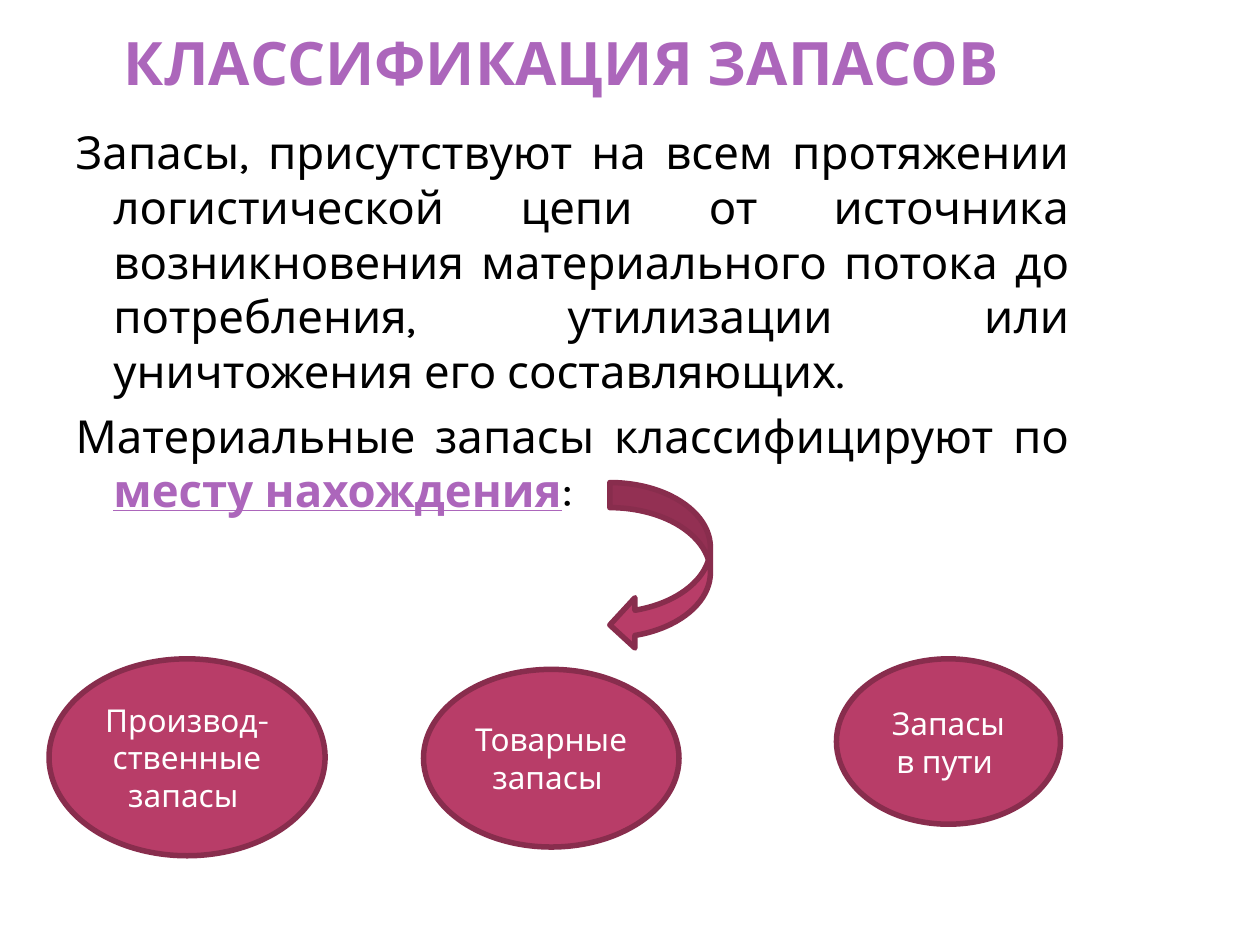
from lxml import etree
from pptx import Presentation
from pptx import util as u
from pptx.dml.color import RGBColor
from pptx.enum import shapes, text
from pptx.oxml.ns import qn

COLORS = {
    "accent": "AC66BB",
    "ink": "000000",
    "berry": "B83D68",
    "border": "882D4D",
    "light": "FFFFFF",
}


class InventorySlide:
    font = "Karla"
    line_width = 3.15

    def __init__(self, deck):
        self.slide = deck.slides.add_slide(deck.slide_layouts[1])

    def color(self, name):
        return RGBColor.from_string(COLORS[name])

    def place(self, part, box):
        part.left, part.top, part.width, part.height = map(u.Pt, box)

    def add_run(self, paragraph, words, size, color, bold=False, underline=False):
        run = paragraph.add_run()
        run.text = words
        run.font.name = self.font
        run.font.size = u.Pt(size)
        run.font.bold = bold
        run.font.underline = underline
        run.font.color.rgb = self.color(color)

    def title(self, words, box):
        heading = self.slide.shapes.title
        self.place(heading, box)
        frame = heading.text_frame
        frame.auto_size = text.MSO_AUTO_SIZE.NONE
        frame.vertical_anchor = text.MSO_ANCHOR.BOTTOM
        frame.margin_left = frame.margin_right = u.Pt(3.6)
        frame.margin_top = frame.margin_bottom = 0
        frame.paragraphs[0].alignment = text.PP_ALIGN.CENTER
        self.add_run(frame.paragraphs[0], words, 34.2, "accent", bold=True)

    def body(self, paragraphs, box):
        description = self.slide.placeholders[1]
        self.place(description, box)
        frame = description.text_frame
        frame.auto_size = text.MSO_AUTO_SIZE.NONE
        for index, runs in enumerate(paragraphs):
            paragraph = frame.add_paragraph() if index else frame.paragraphs[0]
            properties = paragraph._p.get_or_add_pPr()
            properties.set("marL", str(u.Pt(21.6)))
            properties.set("indent", str(u.Pt(-21.6)))
            etree.SubElement(properties, qn("a:buNone"))
            paragraph.alignment = text.PP_ALIGN.JUSTIFY
            paragraph.space_before = u.Pt(6 if index else 0)
            for words, color, emphasized in runs:
                self.add_run(paragraph, words, 26, color, emphasized, emphasized)

    def shape(self, kind, box):
        figure = self.slide.shapes.add_shape(kind, *map(u.Pt, box))
        figure.shadow.inherit = False
        figure.fill.solid()
        figure.fill.fore_color.rgb = self.color("berry")
        figure.line.color.rgb = self.color("border")
        figure.line.width = u.Pt(self.line_width)
        return figure

    def arrow(self, box):
        self.shape(shapes.MSO_SHAPE.CURVED_LEFT_ARROW, box)

    def category(self, words, box):
        frame = self.shape(shapes.MSO_SHAPE.OVAL, box).text_frame
        frame.word_wrap = True
        frame.vertical_anchor = text.MSO_ANCHOR.MIDDLE
        frame.paragraphs[0].alignment = text.PP_ALIGN.CENTER
        self.add_run(frame.paragraphs[0], words, 18, "light")


def main():
    deck = Presentation()
    deck.slide_width, deck.slide_height = u.Pt(720), u.Pt(540)
    inventory = InventorySlide(deck)
    inventory.title("КЛАССИФИКАЦИЯ ЗАПАСОВ", (36, 16.5, 570, 39.5))
    inventory.body(
        [
            [(
                "Запасы, присутствуют на всем протяжении логистической цепи "
                "от источника возникновения материального потока до потребления, "
                "утилизации или уничтожения его составляющих. ",
                "ink", False,
            )],
            [
                ("Материальные запасы классифицируют по ", "ink", False),
                ("месту нахождения", "accent", True),
                (":", "ink", False),
            ],
        ],
        (36, 67.5, 582.5, 440.5),
    )
    inventory.arrow((348.5, 275.75, 57.5, 95.75))
    categories = [
        ("Производ-ственные запасы ", (28, 376.5, 157.75, 112.5)),
        ("Товарные запасы ", (242, 382.5, 146, 101.5)),
        ("Запасы в пути ", (478, 376.5, 128, 94.5)),
    ]
    for words, box in categories:
        inventory.category(words, box)
    deck.save("out.pptx")


if __name__ == "__main__":
    main()
